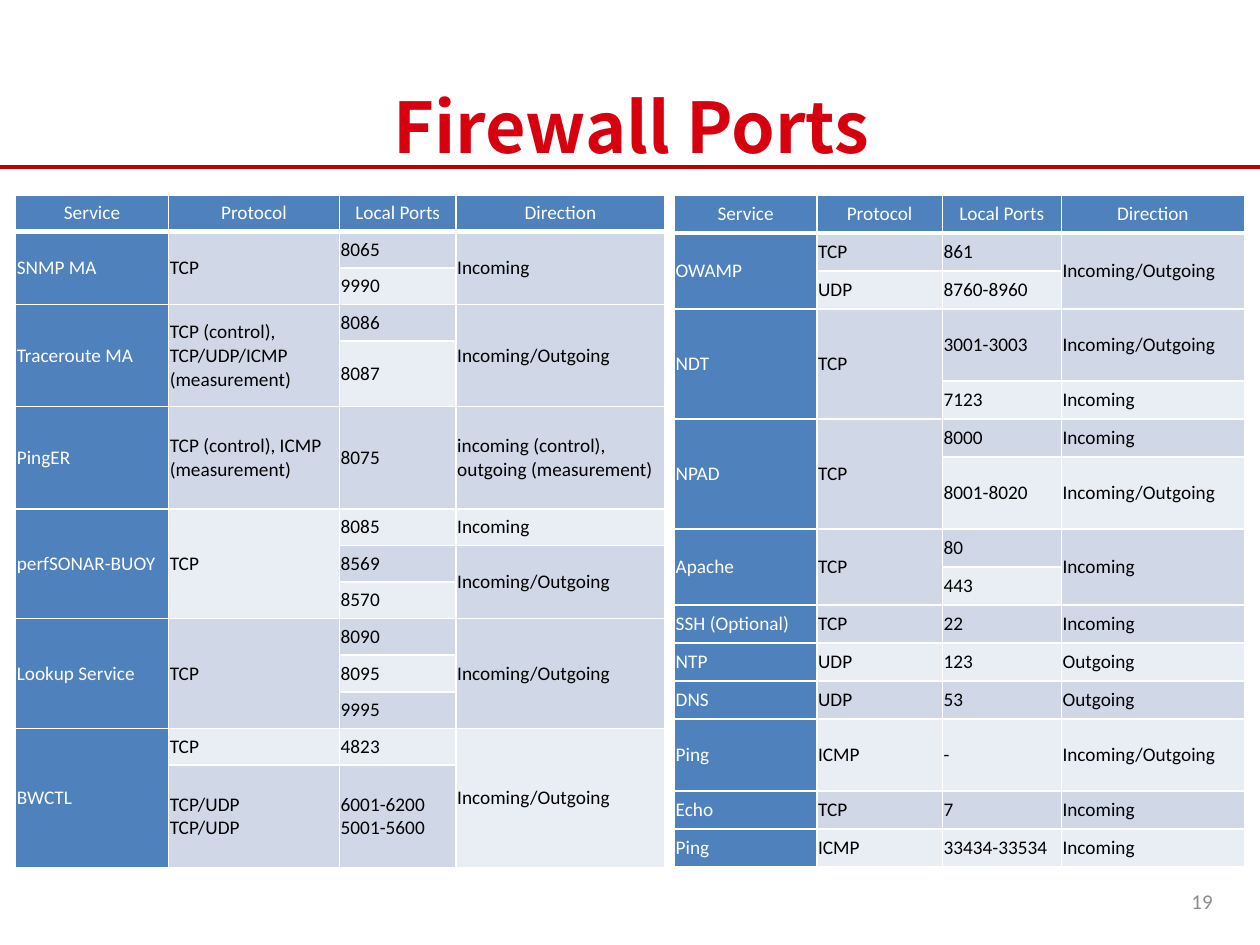
"""Build the Firewall Ports slide with its two port tables."""
import pptx
import pptx.dml.color
import pptx.enum.shapes
import pptx.enum.text
import pptx.oxml
import pptx.oxml.ns
import pptx.util

Pt = pptx.util.Pt
ALIGN = pptx.enum.text.PP_ALIGN
MIDDLE = pptx.enum.text.MSO_ANCHOR.MIDDLE
HEADER_FILL = "4F81BD"
BAND_FILLS = ("E9EDF4", "D0D8E8")
HEADINGS = ("Service", "Protocol", "Local Ports", "Direction")
BOTH = "Incoming/Outgoing"

MEASUREMENT_ROWS = [
    HEADINGS,
    ("SNMP MA", "TCP", "8065", "Incoming"),
    (None, None, "9990", None),
    ("Traceroute MA", "TCP (control), TCP/UDP/ICMP (measurement)", "8086", BOTH),
    (None, None, "8087", None),
    ("PingER", "TCP (control), ICMP (measurement)", "8075",
     "incoming (control), outgoing (measurement)"),
    ("perfSONAR-BUOY", "TCP", "8085", "Incoming"),
    (None, None, "8569", BOTH),
    (None, None, "8570", None),
    ("Lookup Service", "TCP", "8090", BOTH),
    (None, None, "8095", None),
    (None, None, "9995", None),
    ("BWCTL", "TCP", "4823", BOTH),
    (None, "TCP/UDP\nTCP/UDP", "6001-6200\n5001-5600", None),
]
TOOL_ROWS = [
    HEADINGS,
    ("OWAMP", "TCP", "861", BOTH),
    (None, "UDP", "8760-8960", None),
    ("NDT", "TCP", "3001-3003", BOTH),
    (None, None, "7123", "Incoming"),
    ("NPAD", "TCP", "8000", "Incoming"),
    (None, None, "8001-8020", BOTH),
    ("Apache", "TCP", "80", "Incoming"),
    (None, None, "443", None),
    ("SSH (Optional)", "TCP", "22", "Incoming"),
    ("NTP", "UDP", "123", "Outgoing"),
    ("DNS", "UDP", "53", "Outgoing"),
    ("Ping", "ICMP", "-", BOTH),
    ("Echo", "TCP", "7", "Incoming"),
    ("Ping", "ICMP", "33434-33534", "Incoming"),
]
TABLES = [
    dict(rows=MEASUREMENT_ROWS, left=8.9, widths=(87.4, 97.7, 66.6, 119.4),
         row_height=20.9, tall_rows={4: 37.4, 5: 58.5, 13: 58.8}),
    dict(rows=TOOL_ROWS, left=385.4, widths=(81.4, 71.7, 68, 104.7),
         row_height=21.7, tall_rows={3: 41.3, 6: 41.3, 12: 41.3}),
]
TABLE_TOP = 111.4


def color(hex_value):
    return pptx.dml.color.RGBColor.from_string(hex_value)


def write_text(frame, text, size=11, font="Calibri", fill="000000", bold=False,
               align=ALIGN.LEFT):
    frame.word_wrap = True
    frame.vertical_anchor = MIDDLE
    for index, line in enumerate(text.split("\n")):
        paragraph = frame.add_paragraph() if index else frame.paragraphs[0]
        paragraph.alignment = align
        run = paragraph.add_run()
        run.text = line
        run.font.size = Pt(size)
        run.font.name = font
        run.font.bold = bold
        run.font.color.rgb = color(fill)


def set_borders(cell, bottom_width):
    properties = cell._tc.get_or_add_tcPr()
    for index, side in enumerate("LRTB"):
        width = Pt(bottom_width if side == "B" else 1)
        properties.insert(index, pptx.oxml.parse_xml(
            f'<a:ln{side} {pptx.oxml.ns.nsdecls("a")} w="{width}"><a:solidFill>'
            f'<a:srgbClr val="FFFFFF"/></a:solidFill></a:ln{side}>'))


def span_of(rows, row, column):
    end = row + 1
    while end < len(rows) and rows[end][column] is None:
        end += 1
    return end - row


def add_port_table(slide, rows, left, widths, row_height, tall_rows):
    heights = [tall_rows.get(row, row_height) for row in range(len(rows))]
    table = slide.shapes.add_table(len(rows), len(widths), Pt(left), Pt(TABLE_TOP),
                                   Pt(sum(widths)), Pt(sum(heights))).table
    for column, width in enumerate(widths):
        table.columns[column].width = Pt(width)
    for row, values in enumerate(rows):
        table.rows[row].height = Pt(heights[row])
        for column, text in enumerate(values):
            cell = table.cell(row, column)
            header = row == 0
            dark = header or column == 0
            cell.fill.solid()
            cell.fill.fore_color.rgb = color(HEADER_FILL if dark else BAND_FILLS[row % 2])
            set_borders(cell, 3 if header else 1)
            cell.margin_left = cell.margin_right = Pt(0.72)
            cell.margin_top = cell.margin_bottom = Pt(0.72)
            cell.vertical_anchor = MIDDLE
            if text is None:
                continue
            write_text(cell.text_frame, text, fill="FFFFFF" if dark else "000000",
                       align=ALIGN.CENTER if header else ALIGN.LEFT)
            span = span_of(rows, row, column)
            if span > 1:
                cell.merge(table.cell(row + span - 1, column))


def main():
    presentation = pptx.Presentation()
    presentation.slide_width, presentation.slide_height = Pt(720), Pt(540)
    slide = presentation.slides.add_slide(presentation.slide_layouts[5])

    title = slide.shapes.title
    title.left, title.top, title.width, title.height = Pt(36.7), Pt(49), Pt(648), Pt(45.4)
    write_text(title.text_frame, "Firewall Ports", size=40, font="Noto Sans CJK SC",
               fill="D7000F", bold=True, align=ALIGN.CENTER)

    rule = slide.shapes.add_connector(pptx.enum.shapes.MSO_CONNECTOR.STRAIGHT,
                                      Pt(0), Pt(95.6), Pt(720), Pt(95.6))
    rule.line.color.rgb = color("C00000")
    rule.line.width = Pt(2.25)
    rule._element.spPr.append(pptx.oxml.parse_xml(
        f'<a:effectLst {pptx.oxml.ns.nsdecls("a")}/>'))

    for table in TABLES:
        add_port_table(slide, **table)

    number = slide.shapes.add_textbox(Pt(532), Pt(500.5), Pt(168), Pt(28.8))
    write_text(number.text_frame, "19", size=12, fill="8C8C8C", align=ALIGN.RIGHT)
    presentation.save("out.pptx")


if __name__ == "__main__":
    main()
